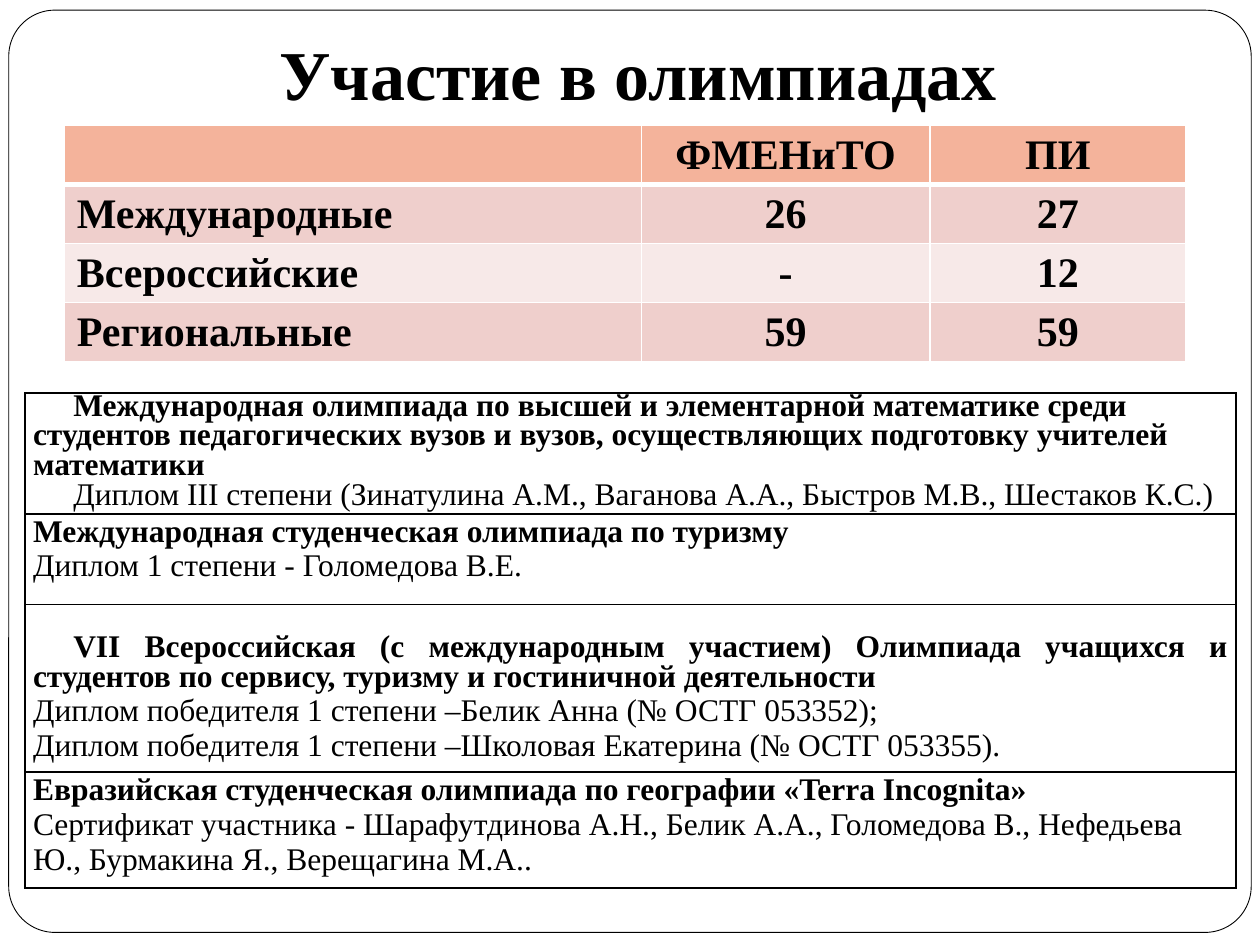
"""Builds a slide on student olympiads: a count table and a list of awards."""
from pptx import Presentation
from pptx.dml.color import RGBColor
from pptx.enum import shapes, text
from pptx.oxml import parse_xml
from pptx.oxml.ns import nsdecls
from pptx.util import Pt

THEME = {
    "font": "Times New Roman",
    "ink": "000000", "paper": "FFFFFF",
    "header": "F4B39B", "bands": ("EFCFCC", "F7E9E8"),
    "title": 40, "counts": 24, "awards": 18,
}
LEFT, CENTER, JUSTIFY = text.PP_ALIGN.LEFT, text.PP_ALIGN.CENTER, text.PP_ALIGN.JUSTIFY

HEADING = "Участие в олимпиадах"
COUNTS = [
    ("", "ФМЕНиТО", "ПИ"),
    ("Международные", "26", "27"),
    ("Всероссийские", "-", "12"),
    ("Региональные", "59", "59"),
]
COUNT_WIDTHS = (329.8, 164.9, 146.2)
COUNT_ROW = 33.7

AWARDS = [
    {"height": 69.1, "top": 0, "align": LEFT, "indented": 2,
     "name": "Международная олимпиада по высшей и элементарной математике среди студентов "
             "педагогических вузов и вузов, осуществляющих подготовку учителей математики",
     "results": ["Диплом III степени (Зинатулина А.М., Ваганова А.А., Быстров М.В., Шестаков К.С.)"]},
    {"height": 51.8, "top": 0, "align": JUSTIFY, "indented": 0,
     "name": "Международная студенческая олимпиада по туризму",
     "results": ["Диплом 1 степени - Голомедова В.Е."]},
    {"height": 95.8, "top": 17, "align": JUSTIFY, "indented": 1,
     "name": "VII Всероссийская (с международным участием) Олимпиада учащихся и студентов "
             "по сервису, туризму и гостиничной деятельности",
     "results": ["Диплом победителя 1 степени –Белик Анна (№ ОСТГ 053352);",
                 "Диплом победителя 1 степени –Школовая Екатерина (№ ОСТГ 053355)."]},
    {"height": 66.2, "top": 0, "align": LEFT, "indented": 0,
     "name": "Евразийская студенческая олимпиада по географии «Terra Incognita»",
     "results": ["Сертификат участника - Шарафутдинова А.Н., Белик А.А., Голомедова В., "
                 "Нефедьева Ю., Бурмакина Я., Верещагина М.А.."]},
]
AWARD_WIDTH = 691.9


def color(name):
    return RGBColor.from_string(name)


def write(paragraph, words, size, align, bold=True):
    paragraph.alignment = align
    run = paragraph.add_run()
    run.text = words
    run.font.name = THEME["font"]
    run.font.size = Pt(size)
    run.font.bold = bold
    run.font.color.rgb = color(THEME["ink"])


def set_borders(cell, ink, bottom=1, top=1):
    properties = cell._tc.get_or_add_tcPr()
    for side, width in (("L", 1), ("R", 1), ("T", top), ("B", bottom)):
        properties.append(parse_xml(
            f'<a:ln{side} {nsdecls("a")} w="{Pt(width)}"><a:solidFill>'
            f'<a:srgbClr val="{ink}"/></a:solidFill></a:ln{side}>'))


def add_grid(slide, left, top, widths, heights):
    grid = slide.shapes.add_table(len(heights), len(widths), Pt(left), Pt(top),
                                  Pt(sum(widths)), Pt(sum(heights))).table
    grid.first_row = grid.horz_banding = False
    for column, width in zip(grid.columns, widths):
        column.width = Pt(width)
    for row, height in zip(grid.rows, heights):
        row.height = Pt(height)
    return grid


def add_frame(slide):
    frame = slide.shapes.add_shape(shapes.MSO_SHAPE.ROUNDED_RECTANGLE,
                                   Pt(5), Pt(5.8), Pt(710), Pt(527))
    frame.adjustments[0] = 0.05
    frame.shadow.inherit = False
    frame.fill.solid()
    frame.fill.fore_color.rgb = color(THEME["paper"])
    frame.line.color.rgb = color(THEME["ink"])
    frame.line.width = Pt(0.5)
    frame.element.getparent().insert(2, frame.element)


def add_heading(slide):
    heading = slide.shapes.title
    heading.left, heading.top, heading.width, heading.height = Pt(70.6), Pt(0), Pt(588.2), Pt(72.7)
    body = heading.text_frame
    body.vertical_anchor = text.MSO_ANCHOR.BOTTOM
    body.margin_left = body.margin_right = body.margin_bottom = Pt(7.2)
    body.margin_top = Pt(3.6)
    body.word_wrap = True
    body.auto_size = text.MSO_AUTO_SIZE.NONE
    write(body.paragraphs[0], HEADING, THEME["title"], CENTER)


def add_counts(slide):
    grid = add_grid(slide, 36.7, 71.6, COUNT_WIDTHS, [COUNT_ROW] * len(COUNTS))
    for r, values in enumerate(COUNTS):
        for c, value in enumerate(values):
            cell = grid.cell(r, c)
            set_borders(cell, THEME["paper"], bottom=1 if r else 3, top=3 if r == 1 else 1)
            cell.fill.solid()
            cell.fill.fore_color.rgb = color(THEME["bands"][(r - 1) % 2] if r else THEME["header"])
            if value:
                write(cell.text_frame.paragraphs[0], value, THEME["counts"], CENTER if c else LEFT)


def add_awards(slide):
    grid = add_grid(slide, 14.4, 224.6, [AWARD_WIDTH], [award["height"] for award in AWARDS])
    for r, award in enumerate(AWARDS):
        cell = grid.cell(r, 0)
        set_borders(cell, THEME["ink"])
        cell.fill.background()
        cell.margin_left = cell.margin_right = Pt(4.5)
        cell.margin_top, cell.margin_bottom = Pt(award["top"]), Pt(0)
        body = cell.text_frame
        for i, words in enumerate([award["name"], *award["results"]]):
            paragraph = body.add_paragraph() if i else body.paragraphs[0]
            write(paragraph, words, THEME["awards"], LEFT if i else award["align"], bold=i == 0)
            if i < award["indented"]:
                paragraph.line_spacing = Pt(17)
                paragraph._p.get_or_add_pPr().set("indent", str(Pt(23)))


def main():
    deck = Presentation()
    deck.slide_width, deck.slide_height = Pt(720), Pt(540)
    slide = deck.slides.add_slide(deck.slide_layouts[5])
    add_frame(slide)
    add_heading(slide)
    add_counts(slide)
    add_awards(slide)
    deck.save("out.pptx")


if __name__ == "__main__":
    main()
